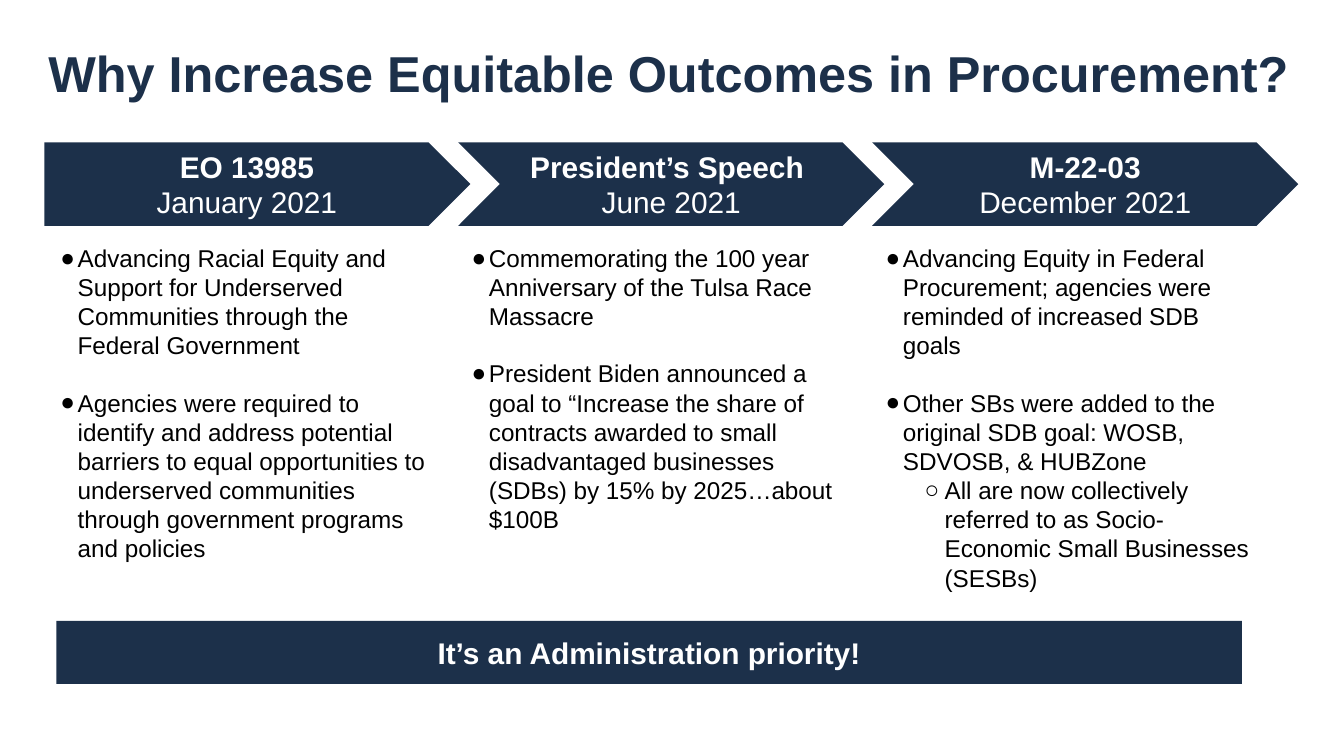
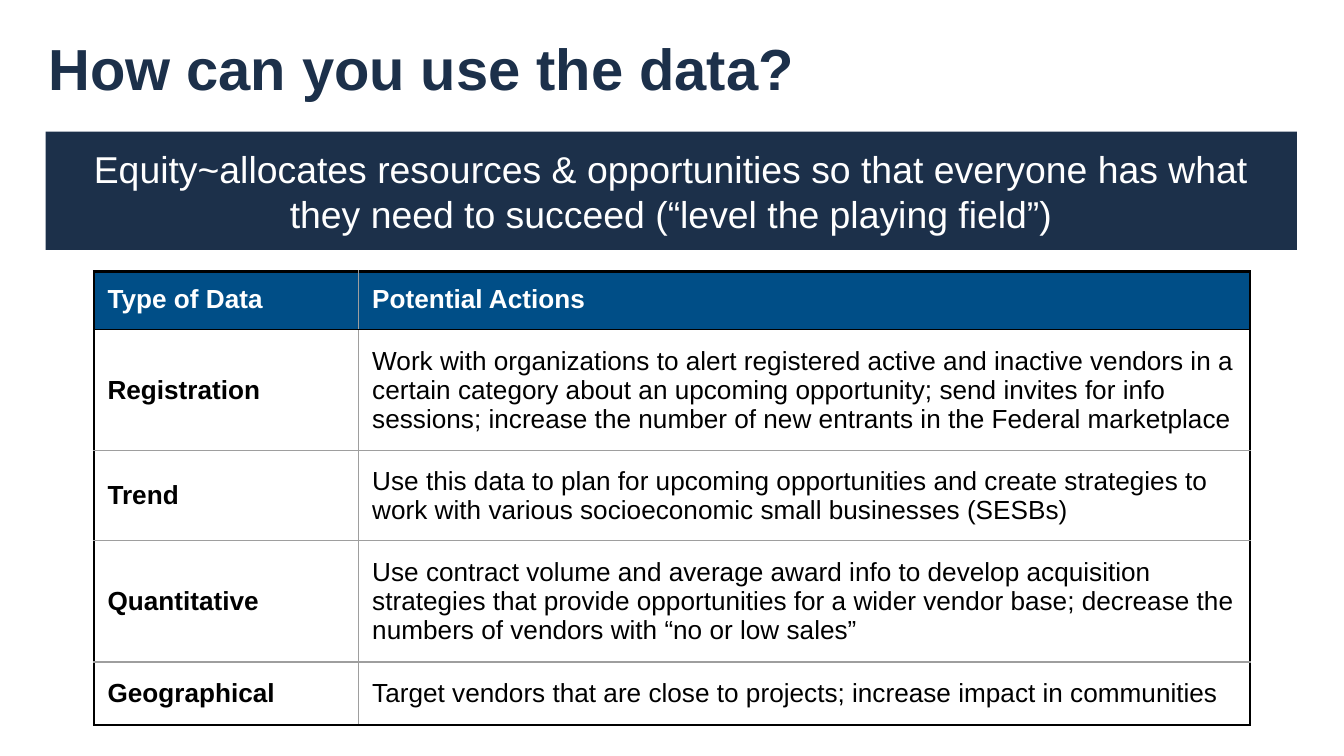
from lxml.etree import SubElement
from pptx import Presentation
from pptx.dml.color import RGBColor
from pptx.enum.shapes import MSO_SHAPE
from pptx.enum.text import MSO_ANCHOR, PP_ALIGN
from pptx.oxml.ns import qn
from pptx.util import Inches, Pt

FONT = "Arial"
NAVY = RGBColor(0x1C, 0x30, 0x4A)
BLUE = RGBColor(0x00, 0x4E, 0x87)
GRAY = RGBColor(0x9E, 0x9E, 0x9E)
BLACK = RGBColor(0x00, 0x00, 0x00)
WHITE = RGBColor(0xFF, 0xFF, 0xFF)

SLIDE_WIDTH = 10
SLIDE_HEIGHT = SLIDE_WIDTH * 9 / 16
TITLE_BOX = (0.29, 0.19, 9.42, 0.62)
INSET = 0.1

REASONS_TITLE = "Why Increase Equitable Outcomes in Procurement?"
MILESTONES = [
    {
        "shape": MSO_SHAPE.PENTAGON,
        "name": "EO 13985",
        "date": "January 2021",
        "body_left": 0.35,
        "body_lines": 11,
        "points": [
            (0, "Advancing Racial Equity and Support for Underserved Communities "
                "through the Federal Government"),
            (0, "Agencies were required to identify and address potential barriers to "
                "equal opportunities to underserved communities through government "
                "programs and policies"),
        ],
    },
    {
        "shape": MSO_SHAPE.CHEVRON,
        "name": "President’s Speech ",
        "date": "June 2021",
        "body_left": 3.41,
        "body_lines": 10,
        "points": [
            (0, "Commemorating the 100 year Anniversary of the Tulsa Race Massacre"),
            (0, "President Biden announced a goal to “Increase the share of contracts "
                "awarded to small disadvantaged businesses (SDBs) by 15% by 2025…about "
                "$100B"),
        ],
    },
    {
        "shape": MSO_SHAPE.CHEVRON,
        "name": "M-22-03",
        "date": "December 2021",
        "body_left": 6.49,
        "body_lines": 12,
        "points": [
            (0, "Advancing Equity in Federal Procurement; agencies were reminded of "
                "increased SDB goals"),
            (0, "Other SBs were added to the original SDB goal: WOSB, SDVOSB, & HUBZone"),
            (1, "All are now collectively referred to as Socio-Economic Small "
                "Businesses (SESBs)"),
        ],
    },
]
PRIORITY = "It’s an Administration priority!"

DATA_TITLE = "How can you use the data?"
EQUITY = ("Equity~allocates resources & opportunities so that everyone has what they "
          "need to succeed (“level the playing field”)")
ACTIONS = [
    ("Type of Data", "Potential Actions"),
    ("Registration",
     "Work with organizations to alert registered active and inactive vendors in a "
     "certain category about an upcoming opportunity; send invites for info sessions; "
     "increase the number of new entrants in the Federal marketplace"),
    ("Trend",
     "Use this data to plan for upcoming opportunities and create strategies to work "
     "with various socioeconomic small businesses (SESBs)"),
    ("Quantitative",
     "Use contract volume and average award info to develop acquisition strategies "
     "that provide opportunities for a wider vendor base; decrease the numbers of "
     "vendors with “no or low sales”"),
    ("Geographical",
     "Target vendors that are close to projects; increase impact in communities"),
]
COLUMN_WIDTHS = [1.97, 6.63]
ROW_HEIGHTS = [0.43, 0.9, 0.67, 0.9, 0.47]

ARROW_LEFT, ARROW_TOP, ARROW_WIDTH, ARROW_HEIGHT = 0.33, 1.06, 3.17, 0.62
ARROW_STEP = 3.08
BODY_TOP, BODY_WIDTH, LINE_HEIGHT = 1.71, 2.91, 0.22
BULLETS = [("●", 0.13), ("○", 0.44)]
BULLET_HANG = -0.15


def write(frame, text, size=13, color=BLACK, bold=False, align=PP_ALIGN.LEFT,
          spacing=None, before=0, level=None):
    paragraph = frame.paragraphs[0]
    if paragraph.runs:
        paragraph = frame.add_paragraph()
    paragraph.alignment = align
    paragraph.space_before = Pt(before)
    if spacing:
        paragraph.line_spacing = spacing
    if level is not None:
        add_bullet(paragraph, level)
    run = paragraph.add_run()
    run.text = text
    run.font.name = FONT
    run.font.size = Pt(size)
    run.font.bold = bold
    run.font.color.rgb = color


def add_bullet(paragraph, level):
    character, margin = BULLETS[level]
    paragraph.level = level
    properties = paragraph._p.get_or_add_pPr()
    properties.set("marL", str(Inches(margin)))
    properties.set("indent", str(Inches(BULLET_HANG)))
    color = SubElement(properties, qn("a:buClr"))
    SubElement(color, qn("a:srgbClr"), val=str(BLACK))
    SubElement(properties, qn("a:buFont"), typeface=FONT)
    SubElement(properties, qn("a:buChar"), char=character)


def set_insets(target, horizontal=INSET, vertical=INSET):
    target.margin_left = target.margin_right = Inches(horizontal)
    target.margin_top = target.margin_bottom = Inches(vertical)


def add_text_box(slide, box, anchor=MSO_ANCHOR.TOP, **insets):
    frame = slide.shapes.add_textbox(*map(Inches, box)).text_frame
    frame.word_wrap = True
    frame.vertical_anchor = anchor
    set_insets(frame, **insets)
    return frame


def add_band(slide, kind, box):
    shape = slide.shapes.add_shape(kind, *map(Inches, box))
    shape.shadow.inherit = False
    shape.fill.solid()
    shape.fill.fore_color.rgb = NAVY
    shape.line.fill.background()
    frame = shape.text_frame
    frame.word_wrap = True
    frame.vertical_anchor = MSO_ANCHOR.MIDDLE
    set_insets(frame)
    return frame


def add_titled_slide(presentation, title, size):
    slide = presentation.slides.add_slide(presentation.slide_layouts[6])
    frame = add_text_box(slide, TITLE_BOX, MSO_ANCHOR.BOTTOM,
                         horizontal=0.07, vertical=0.04)
    write(frame, title, size=size, color=NAVY, bold=True, spacing=0.9)
    return slide


def set_borders(cell, **borders):
    properties = cell._tc.get_or_add_tcPr()
    for side in "LRTB":
        color, width = borders[side]
        line = SubElement(properties, qn(f"a:ln{side}"), w=str(Pt(width)))
        fill = SubElement(line, qn("a:solidFill"))
        SubElement(fill, qn("a:srgbClr"), val=str(color))


def add_milestone(slide, index, milestone):
    left = ARROW_LEFT + index * ARROW_STEP
    arrow = add_band(slide, milestone["shape"],
                     (left, ARROW_TOP, ARROW_WIDTH, ARROW_HEIGHT))
    for key in ("name", "date"):
        write(arrow, milestone[key], size=16, color=WHITE, bold=key == "name",
              align=PP_ALIGN.CENTER)
    height = milestone["body_lines"] * LINE_HEIGHT + 2 * INSET
    body = add_text_box(slide, (milestone["body_left"], BODY_TOP, BODY_WIDTH, height))
    for position, (level, text) in enumerate(milestone["points"]):
        write(body, text, level=level, before=15 if position and level == 0 else 0)


def add_actions_table(slide):
    box = (0.7, 2.02, sum(COLUMN_WIDTHS), sum(ROW_HEIGHTS))
    table = slide.shapes.add_table(len(ACTIONS), len(COLUMN_WIDTHS),
                                   *map(Inches, box)).table
    table.horz_banding = False
    for column, width in zip(table.columns, COLUMN_WIDTHS):
        column.width = Inches(width)
    for row, height in zip(table.rows, ROW_HEIGHTS):
        row.height = Inches(height)
    outer, inner, under_header = (BLACK, 1.5), (GRAY, 0.75), (BLACK, 0.75)
    last = len(ACTIONS) - 1
    for row, texts in enumerate(ACTIONS):
        header = row == 0
        for column, text in enumerate(texts):
            cell = table.cell(row, column)
            set_insets(cell)
            cell.vertical_anchor = MSO_ANCHOR.TOP if header else MSO_ANCHOR.MIDDLE
            set_borders(
                cell,
                L=inner if column else outer,
                R=outer if column else inner,
                T={0: outer, 1: under_header}.get(row, inner),
                B={0: under_header, last: outer}.get(row, inner),
            )
            if header:
                cell.fill.solid()
                cell.fill.fore_color.rgb = BLUE
            else:
                cell.fill.background()
            write(cell.text_frame, text, size=14, color=WHITE if header else BLACK,
                  bold=header or column == 0)


def main():
    presentation = Presentation()
    presentation.slide_width = Inches(SLIDE_WIDTH)
    presentation.slide_height = Inches(SLIDE_HEIGHT)

    slide = add_titled_slide(presentation, REASONS_TITLE, 27)
    for index, milestone in enumerate(MILESTONES):
        add_milestone(slide, index, milestone)
    priority = add_band(slide, MSO_SHAPE.RECTANGLE, (0.42, 4.62, 8.82, 0.47))
    write(priority, PRIORITY, size=16, color=WHITE, bold=True, align=PP_ALIGN.CENTER)

    slide = add_titled_slide(presentation, DATA_TITLE, 31)
    equity = add_band(slide, MSO_SHAPE.RECTANGLE, (0.34, 0.98, 9.31, 0.88))
    write(equity, EQUITY, size=20, color=WHITE, align=PP_ALIGN.CENTER)
    add_actions_table(slide)

    presentation.save("out.pptx")


if __name__ == "__main__":
    main()
